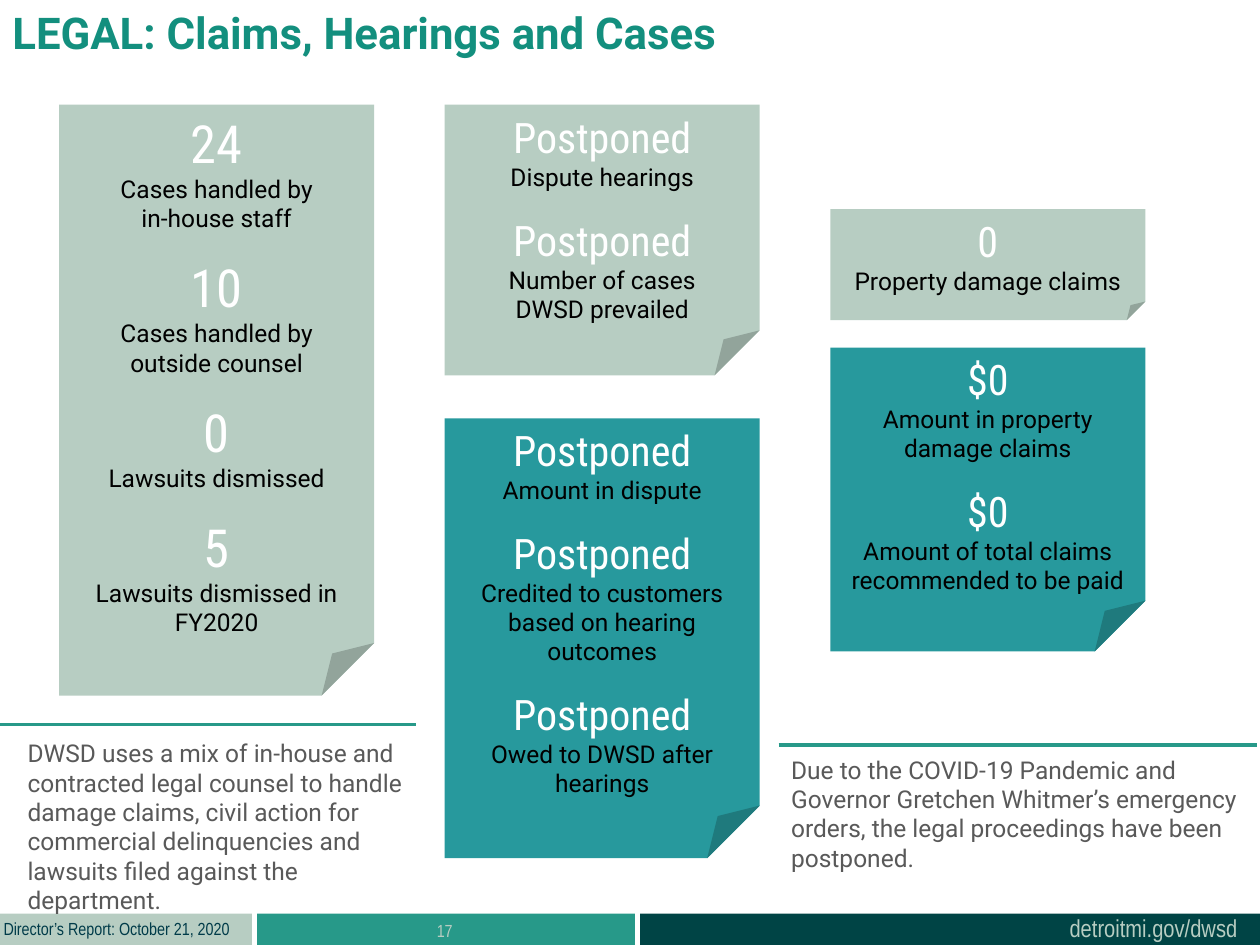
from pptx import Presentation
from pptx.dml.color import RGBColor
from pptx.enum.shapes import MSO_CONNECTOR, MSO_SHAPE
from pptx.enum.text import MSO_ANCHOR, PP_ALIGN
from pptx.oxml.ns import qn
from pptx.util import Inches, Pt
from lxml import etree

RECT, FOLDED = MSO_SHAPE.RECTANGLE, MSO_SHAPE.FOLDED_CORNER
STRAIGHT = MSO_CONNECTOR.STRAIGHT
TOP, MIDDLE = MSO_ANCHOR.TOP, MSO_ANCHOR.MIDDLE
LEFT, CENTER = PP_ALIGN.LEFT, PP_ALIGN.CENTER

WHITE = RGBColor(0xFF, 0xFF, 0xFF)
BLACK = RGBColor(0x00, 0x00, 0x00)
GRAY = RGBColor(0x59, 0x59, 0x59)
SAGE = RGBColor(0xB7, 0xCD, 0xC2)
TEAL = RGBColor(0x27, 0x99, 0x9D)
GREEN = RGBColor(0x27, 0x99, 0x89)
TITLE_GREEN = RGBColor(0x13, 0x8F, 0x7E)
DARK = RGBColor(0x00, 0x44, 0x45)
NAVY = RGBColor(0x00, 0x3B, 0x49)

BODY, FIGURE, FOOTER = "Roboto", "Roboto Condensed", "Arial Narrow"
COLUMNS, ROWS = 100, 75
CARD_LEFT, CARD_PITCH, CARD_WIDTH = 4.7, 30.6, 25


class Deck:
    def __init__(self):
        self.prs = Presentation()
        self.prs.slide_width, self.prs.slide_height = Inches(10), Inches(7.5)
        self.s = self.prs.slides.add_slide(self.prs.slide_layouts[6])

    def x(self, columns):
        return round(self.prs.slide_width * columns / COLUMNS)

    def y(self, rows):
        return round(self.prs.slide_height * rows / ROWS)

    def box(self, left, top, width, height):
        return self.x(left), self.y(top), self.x(width), self.y(height)

    def style(self, p, text, size, font, color, align=LEFT, bold=False):
        p.text = text
        p.alignment = align
        p.font.size, p.font.name, p.font.bold = Pt(size), font, bold
        p.font.color.rgb = color

    def shape(self, kind, area, color):
        sp = self.s.shapes.add_shape(kind, *self.box(*area))
        sp.shadow.inherit = False
        sp.fill.solid()
        sp.fill.fore_color.rgb = color
        sp.line.fill.background()
        return sp

    def text(self, area, text, size, font, color, wrap=True, **look):
        tf = self.s.shapes.add_textbox(*self.box(*area)).text_frame
        tf.word_wrap = wrap
        self.style(tf.paragraphs[0], text, size, font, color, **look)

    def rule(self, left, right, row):
        y = self.y(row)
        line = self.s.shapes.add_connector(STRAIGHT, self.x(left), y, self.x(right), y)
        line.line.color.rgb = GREEN
        line.line.width = Pt(2.25)
        etree.SubElement(line._element.spPr, qn("a:effectLst"))

    def card(self, column, top, height, color, facts, size=24, anchor=MIDDLE):
        left = CARD_LEFT + column * CARD_PITCH
        tf = self.shape(FOLDED, (left, top, CARD_WIDTH, height), color).text_frame
        tf.word_wrap = True
        tf.vertical_anchor = anchor
        for i, (figure, label) in enumerate(facts):
            p = tf.add_paragraph() if i else tf.paragraphs[0]
            self.style(p, figure, size, FIGURE, WHITE, CENTER)
            if i:
                p.space_before = Pt(13)
            self.style(tf.add_paragraph(), label, 14, BODY, BLACK, CENTER)


def main():
    deck = Deck()
    for left, width, color in ((20.4, 30, GREEN), (50.8, 50, DARK), (0, 20, SAGE)):
        deck.shape(RECT, (left, 72.5, min(width, COLUMNS - left), 2.5), color)
    deck.text((83.9, 72, 15.5, 3.4), "detroitmi.gov/dwsd", 14, FOOTER, SAGE, wrap=False)
    deck.text((-0.7, 72.4, 20, 2.7), "Director’s Report: October 21, 2020", 10, FOOTER, NAVY)
    deck.text((20.3, 72.5, 30, 4), "17", 10, FOOTER, SAGE, align=CENTER)
    deck.text((0, 0, 75.9, 7.7), "LEGAL: Claims, Hearings and Cases", 25, BODY,
              TITLE_GREEN, bold=True)

    deck.card(0, 8.3, 46.9, SAGE, [
        ("24", "Cases handled by\nin-house staff"),
        ("10", "Cases handled by\noutside counsel"),
        ("0", "Lawsuits dismissed"),
        ("5", "Lawsuits dismissed in FY2020"),
    ], size=30)
    deck.card(1, 8.3, 21.5, SAGE, [
        ("Postponed", "Dispute hearings"),
        ("Postponed", "Number of cases\nDWSD prevailed"),
    ])
    deck.card(1, 33.2, 34.9, TEAL, [
        ("Postponed", "Amount in dispute"),
        ("Postponed", "Credited to customers based on hearing outcomes"),
        ("Postponed", "Owed to DWSD after hearings"),
    ], anchor=TOP)
    deck.card(2, 16.6, 8.8, SAGE, [("0", "Property damage claims")])
    deck.card(2, 27.6, 24.1, TEAL, [
        ("$0", "Amount in property\ndamage claims"),
        ("$0", "Amount of total claims recommended to be paid"),
    ])

    deck.rule(0, 33, 57.5)
    deck.text((1.2, 58.1, 34.1, 12.8),
              "DWSD uses a mix of in-house and contracted legal counsel to handle "
              "damage claims, civil action for commercial delinquencies and "
              "lawsuits filed against the department.", 14, BODY, GRAY)
    deck.rule(61.8, 99.8, 59.1)
    deck.text((61.8, 59.4, 38.2, 10.4),
              "Due to the COVID-19 Pandemic and Governor Gretchen Whitmer’s "
              "emergency orders, the legal proceedings have been postponed.",
              14, BODY, GRAY)
    deck.prs.save("out.pptx")


if __name__ == "__main__":
    main()
